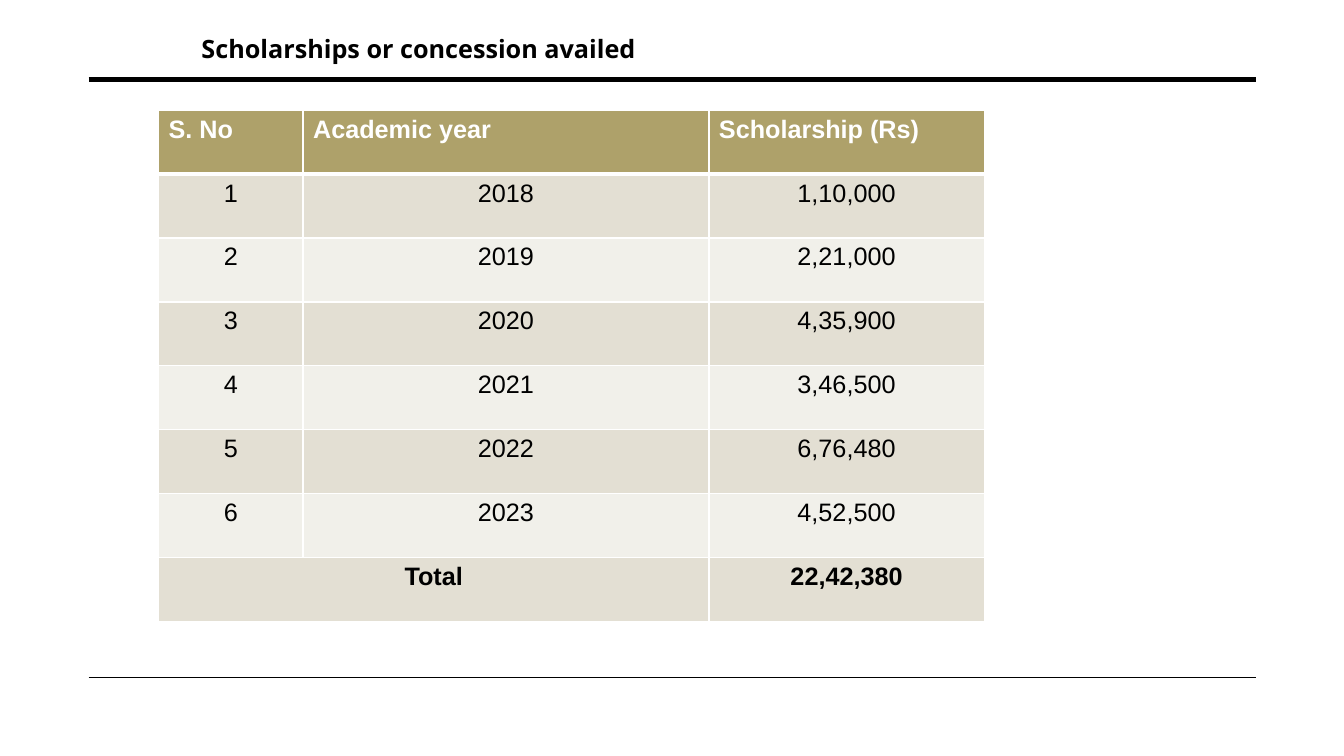
from lxml.etree import SubElement
from pptx import Presentation
from pptx.dml.color import RGBColor
from pptx.enum.shapes import MSO_CONNECTOR as Connector
from pptx.enum.text import MSO_AUTO_SIZE as AutoSize, PP_ALIGN as Align
from pptx.oxml.ns import qn
from pptx.util import Inches, Pt

HEADINGS = ["S. No", "Academic year", "Scholarship (Rs)"]
AWARDS = [
    ("2018", "1,10,000"),
    ("2019", "2,21,000"),
    ("2020", "4,35,900"),
    ("2021", "3,46,500"),
    ("2022", "6,76,480"),
    ("2023", "4,52,500"),
]
TOTAL = "22,42,380"


def rgb(hex_code):
    return RGBColor.from_string(hex_code)


class ScholarshipSlide:
    """Holds the style and the slide; lengths are percentages of the slide's size."""

    ink, paper, gold = "000000", "FFFFFF", "AEA16A"
    bands = ("E3DFD3", "F1F0EA")
    title_font, table_font, size = "Open Sans", "Arial", 18

    def __init__(self, deck):
        self.width, self.height = deck.slide_width, deck.slide_height
        self.slide = deck.slides.add_slide(deck.slide_layouts[6])
        self.shapes = self.slide.shapes
        background = self.slide.background.fill
        background.solid()
        background.fore_color.rgb = rgb(self.paper)

    def x(self, share):
        return round(self.width * share / 100)

    def y(self, share):
        return round(self.height * share / 100)

    def rule(self, left, right, top, weight):
        line = self.shapes.add_connector(
            Connector.STRAIGHT, self.x(left), self.y(top), self.x(right), self.y(top))
        line.line.color.rgb = rgb(self.ink)
        line.line.width = Pt(weight)
        SubElement(line._element.spPr, qn("a:effectLst"))

    def add_text(self, frame, text, font, colour, bold, align):
        paragraph = frame.paragraphs[0]
        paragraph.alignment = align
        run = paragraph.add_run()
        run.text = text
        run.font.name, run.font.size, run.font.bold = font, Pt(self.size), bold
        run.font.color.rgb = rgb(colour)

    def title(self, left, top, width, height, text):
        box = self.shapes.add_textbox(
            self.x(left), self.y(top), self.x(width), self.y(height))
        box.text_frame.word_wrap = True
        box.text_frame.auto_size = AutoSize.SHAPE_TO_FIT_TEXT
        self.add_text(box.text_frame, text, self.title_font, self.ink, True, Align.LEFT)

    def border(self, cell, top, bottom):
        properties = cell._tc.get_or_add_tcPr()
        for side, weight in (("L", 1), ("R", 1), ("T", top), ("B", bottom)):
            edge = SubElement(properties, qn(f"a:ln{side}"), w=str(Pt(weight)))
            fill = SubElement(edge, qn("a:solidFill"))
            SubElement(fill, qn("a:srgbClr"), val=self.paper)

    def table(self, left, top, column_widths, row_height, rows):
        """Draw a heading row, banded rows and a bold last row; None joins the cell to its left."""
        grid = self.shapes.add_table(
            len(rows), len(column_widths), self.x(left), self.y(top),
            self.x(sum(column_widths)), self.y(row_height * len(rows))).table
        for column, width in zip(grid.columns, column_widths):
            column.width = self.x(width)
        for r, values in enumerate(rows):
            grid.rows[r].height = self.y(row_height)
            heading = r == 0
            bold = heading or r == len(rows) - 1
            fill = self.gold if heading else self.bands[(r - 1) % 2]
            colour = self.paper if heading else self.ink
            align = Align.LEFT if heading else Align.CENTER
            for c, value in enumerate(values):
                cell = grid.cell(r, c)
                self.border(cell, 3 if r == 1 else 1, 3 if heading else 1)
                cell.fill.solid()
                cell.fill.fore_color.rgb = rgb(fill)
                if value is None:
                    grid.cell(r, c - 1).merge(cell)
                else:
                    self.add_text(cell.text_frame, value, self.table_font, colour, bold, align)


def main():
    deck = Presentation()
    deck.slide_width, deck.slide_height = Inches(13.33), Inches(7.5)
    page = ScholarshipSlide(deck)
    for top, weight in ((10.53, 3.5), (89.6, 1)):
        page.rule(6.6, 93.47, top, weight)
    page.title(14.25, 3.73, 50, 5.33, "Scholarships or concession availed")
    numbered = [(str(n), *award) for n, award in enumerate(AWARDS, 1)]
    page.table(11.8, 14.6, (10.75, 30.2, 20.48), 8.45,
               [HEADINGS, *numbered, ("Total", None, TOTAL)])
    deck.save("out.pptx")


if __name__ == "__main__":
    main()
